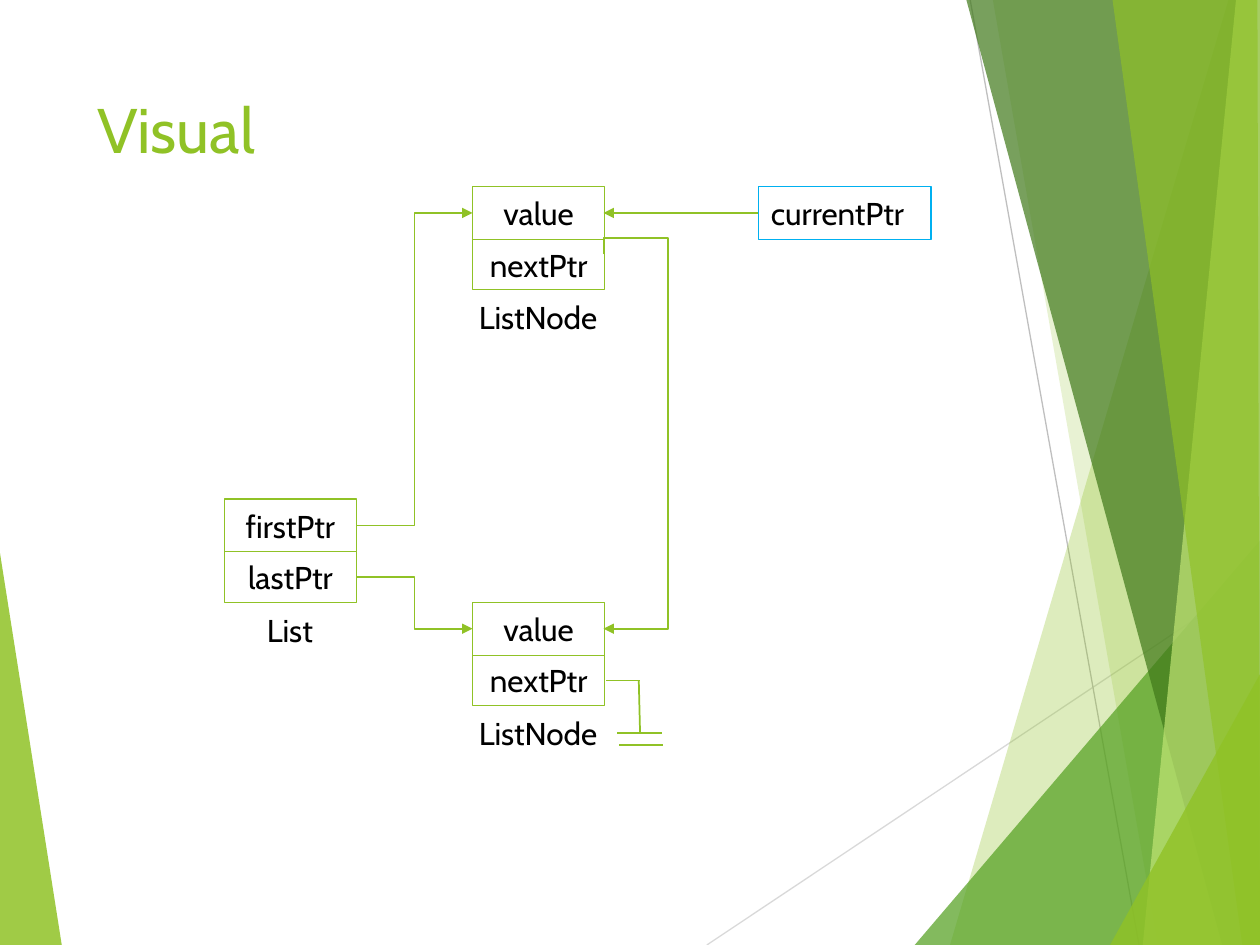
from lxml import etree
from pptx import Presentation
from pptx import util as u
from pptx.dml.color import RGBColor
from pptx.enum import shapes, text
from pptx.oxml.ns import qn

SCALE = 9144
FONT = "Cabin"
GREEN = "90C226"
BLUE = "00B0F0"
BLACK = "000000"
NODE_LEFT, NODE_WIDTH = 375, 105
CELL_HEIGHTS = (42, 40)

FACETS = [
    ([(0, 439), (49, 750), (0, 750)], GREEN, 85),
    ([(975, 0), (754, 750), (1000, 750), (1000, 0)], GREEN, 30),
    ([(788, 0), (919, 750), (1000, 750), (1000, 0)], GREEN, 20),
    ([(726, 750), (1000, 429), (1000, 750)], "54A021", 72),
    ([(767, 0), (970, 750), (1000, 750), (1000, 0)], "3F7819", 70),
    ([(981, 0), (907, 750), (1000, 750), (1000, 0)], "C0E474", 70),
    ([(883, 0), (986, 750), (1000, 750), (998, 0)], GREEN, 65),
    ([(881, 750), (1000, 535), (1000, 750)], GREEN, 80),
]
RAYS = [((561, 750), (1000, 457), "D9D9D9"), ((770, 0), (904, 750), "BFBFBF")]
NULL_MARK = [
    ((481, 540), (508, 540)),
    ((525, 582), (490, 582)),
    ((526, 591), (491, 591)),
    ((507, 540), (508, 582)),
]


def px(value):
    return u.Emu(value * SCALE)


def colour(value):
    return RGBColor.from_string(value)


def format_text(frame, size, tone, align):
    for para in frame.paragraphs:
        para.alignment = align
        for span in para.runs:
            span.font.name = FONT
            span.font.size = u.Pt(size)
            span.font.color.rgb = colour(tone)


def style_line(item, tone, weight, arrow=False):
    item.line.color.rgb = colour(tone)
    item.line.width = u.Pt(weight)
    if arrow:
        line = item.line._get_or_add_ln()
        etree.SubElement(line, qn("a:tailEnd"), type="triangle")


def add_line(slide, start, end, tone=GREEN, weight=1, arrow=False, elbow=False):
    kind = shapes.MSO_CONNECTOR.ELBOW if elbow else shapes.MSO_CONNECTOR.STRAIGHT
    line = slide.shapes.add_connector(kind, *map(px, start + end))
    style_line(line, tone, weight, arrow)
    etree.SubElement(line._element.spPr, qn("a:effectLst"))


def add_outline(slide, points, close):
    builder = slide.shapes.build_freeform(*points[0], scale=SCALE)
    builder.add_line_segments(points[1:], close=close)
    outline = builder.convert_to_shape()
    outline.shadow.inherit = False
    return outline


def add_facet(slide, points, tone, opacity):
    facet = add_outline(slide, points, True)
    facet.line.fill.background()
    facet.fill.solid()
    facet.fill.fore_color.rgb = colour(tone)
    tint = facet._element.spPr.find(f".//{qn('a:srgbClr')}")
    etree.SubElement(tint, qn("a:alpha"), val=str(opacity * 1000))


def add_route(slide, points):
    route = add_outline(slide, points, False)
    route.fill.background()
    style_line(route, GREEN, 1, arrow=True)


def add_cell(slide, area, label, tone=GREEN, align=text.PP_ALIGN.CENTER):
    cell = slide.shapes.add_shape(shapes.MSO_SHAPE.RECTANGLE, *map(px, area))
    cell.shadow.inherit = False
    cell.fill.background()
    style_line(cell, tone, 0.75)
    cell.text_frame.text = label
    format_text(cell.text_frame, 18, BLACK, align)


def add_record(slide, left, top, fields, name):
    for field, height in zip(fields, CELL_HEIGHTS):
        add_cell(slide, (left, top, NODE_WIDTH, height), field)
        top += height
    caption = slide.shapes.add_textbox(*map(px, (left - 9, top + 2, 122, 40)))
    caption.text_frame.word_wrap = True
    caption.text_frame.text = name
    format_text(caption.text_frame, 18, BLACK, text.PP_ALIGN.CENTER)


def set_title(slide, label):
    title = slide.shapes.title
    title.left, title.top, title.width, title.height = map(px, (67, 67, 694, 144))
    title.text_frame.text = label
    title.text_frame.vertical_anchor = text.MSO_ANCHOR.TOP
    format_text(title.text_frame, 36, GREEN, text.PP_ALIGN.LEFT)


def add_backdrop(slide):
    add_facet(slide, *FACETS[0])
    for start, end, tone in RAYS:
        add_line(slide, start, end, tone, 0.75)
    for facet in FACETS[1:]:
        add_facet(slide, *facet)


def main():
    deck = Presentation()
    deck.slide_width, deck.slide_height = px(1000), px(750)
    slide = deck.slides.add_slide(deck.slide_layouts[5])
    add_backdrop(slide)
    set_title(slide, "Visual")

    add_record(slide, 178, 396, ("firstPtr", "lastPtr"), "List")
    for top in (478, 148):
        add_record(slide, NODE_LEFT, top, ("value", "nextPtr"), "ListNode")
    add_cell(slide, (602, 148, 137, 42), "currentPtr", BLUE, text.PP_ALIGN.LEFT)

    add_line(slide, (283, 417), (375, 169), arrow=True, elbow=True)
    add_line(slide, (283, 458), (375, 499), arrow=True, elbow=True)
    add_line(slide, (602, 169), (479, 169), arrow=True)
    add_route(slide, [(479, 202), (479, 189), (530, 189), (530, 499), (479, 499)])
    for start, end in NULL_MARK:
        add_line(slide, start, end)
    deck.save("out.pptx")


if __name__ == "__main__":
    main()
